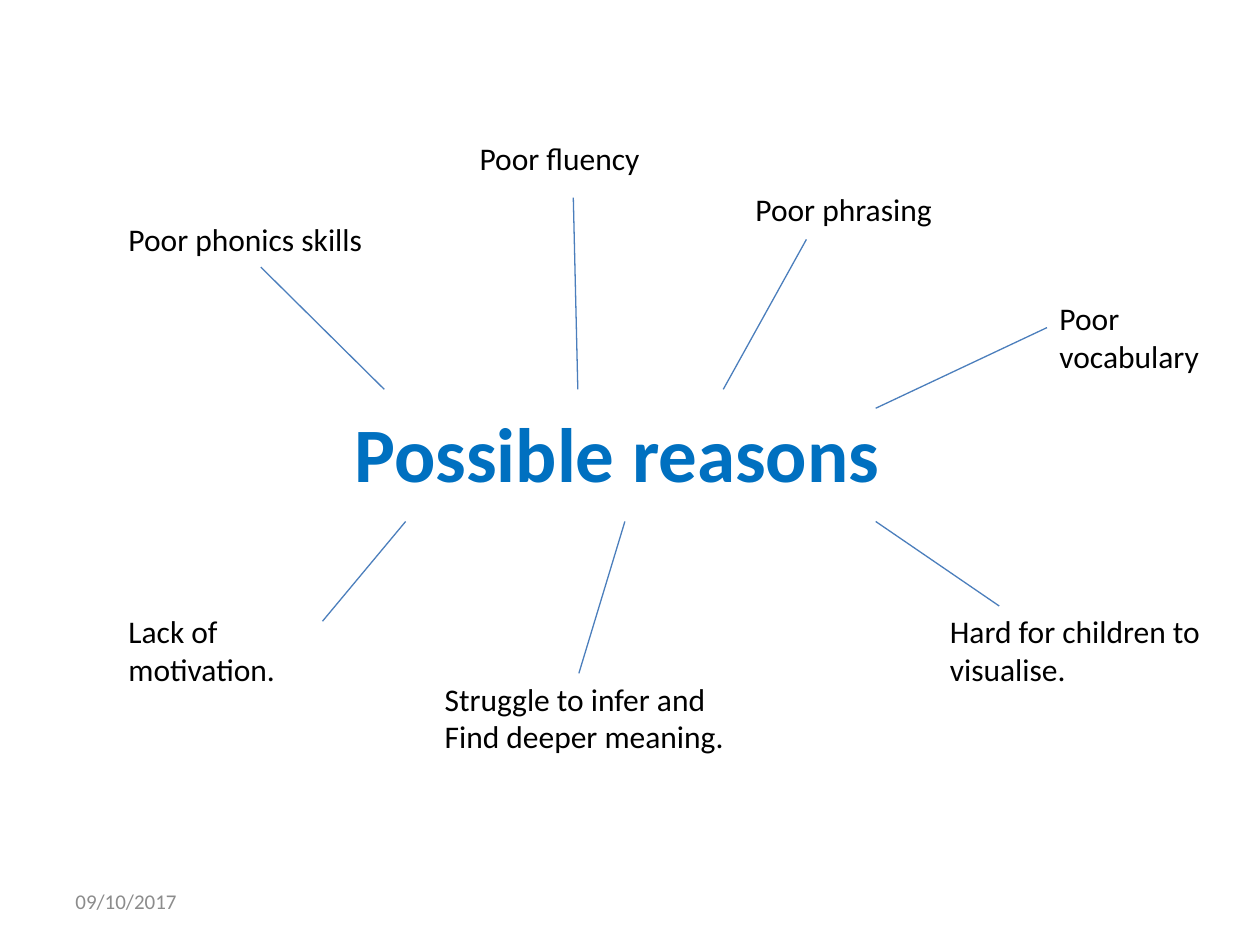
from pptx import Presentation
from pptx.dml.color import RGBColor
from pptx.enum.shapes import MSO_CONNECTOR
from pptx.enum.text import MSO_ANCHOR, PP_ALIGN
from pptx.oxml.ns import qn
from pptx.util import Pt
from lxml import etree

STRAIGHT = MSO_CONNECTOR.STRAIGHT
TOP, MIDDLE = MSO_ANCHOR.TOP, MSO_ANCHOR.MIDDLE
LEFT, CENTER = PP_ALIGN.LEFT, PP_ALIGN.CENTER
TITLE_BLUE = RGBColor(0x00, 0x70, 0xC0)
SPOKE_BLUE = RGBColor(0x4B, 0x7E, 0xBC)
BLACK = RGBColor(0x00, 0x00, 0x00)
GREY = RGBColor(0x8C, 0x8C, 0x8C)
FONT = "Calibri"

TITLE = "Possible reasons"
DATE = "09/10/2017"
ONE_LINE, TWO_LINES = 29, 51
UPPER, LOWER = 222.5, 298

# reason, box (left, top, width, height), spoke start, spoke end
REASONS = [
    ("Poor phonics skills", (66.3, 122.4, 165, ONE_LINE), (219.6, UPPER), (149, 152.6)),
    ("Poor fluency", (267, 75.8, 194, ONE_LINE), (330.2, UPPER), (327.6, 113)),
    ("Poor phrasing", (424.6, 105, 125, ONE_LINE), (413.3, UPPER), (460.8, 136.8)),
    ("Poor\nvocabulary", (598.3, 167.5, 107, TWO_LINES), (500.4, 233.3), (598.3, 187.2)),
    ("Hard for children to visualise.", (535.7, 346.3, 169.2, TWO_LINES),
     (500.4, LOWER), (571, 346.3)),
    ("Struggle to infer and\nFind deeper meaning.", (247, 384.8, 190, TWO_LINES),
     (357.1, LOWER), (330.8, 384.8)),
    ("Lack of motivation.", (66.3, 346.3, 118, TWO_LINES), (231.8, LOWER), (184.3, 355)),
]


def add_text(slide, text, box, size, color, anchor=TOP, align=LEFT, bold=False):
    frame = slide.shapes.add_textbox(*map(Pt, box)).text_frame
    frame.word_wrap = True
    frame.vertical_anchor = anchor
    frame.text = text
    for paragraph in frame.paragraphs:
        paragraph.alignment = align
        for run in paragraph.runs:
            run.font.name = FONT
            run.font.size = Pt(size)
            run.font.bold = bold
            run.font.color.rgb = color


def add_spoke(slide, start, end):
    spoke = slide.shapes.add_connector(STRAIGHT, *map(Pt, start + end))
    spoke.line.color.rgb = SPOKE_BLUE
    spoke.line.width = Pt(0.75)
    etree.SubElement(spoke._element.spPr, qn("a:effectLst"))


def main():
    deck = Presentation()
    deck.slide_width, deck.slide_height = Pt(720), Pt(540)
    slide = deck.slides.add_slide(deck.slide_layouts[6])
    add_text(slide, TITLE, (28.8, 213, 648, 90), 44, TITLE_BLUE, MIDDLE, CENTER, True)
    add_text(slide, DATE, (36, 500.5, 168, 28.8), 12, GREY, MIDDLE)
    for reason, box, start, end in REASONS:
        add_spoke(slide, start, end)
        add_text(slide, reason, box, 18, BLACK)
    deck.save("out.pptx")


if __name__ == "__main__":
    main()
